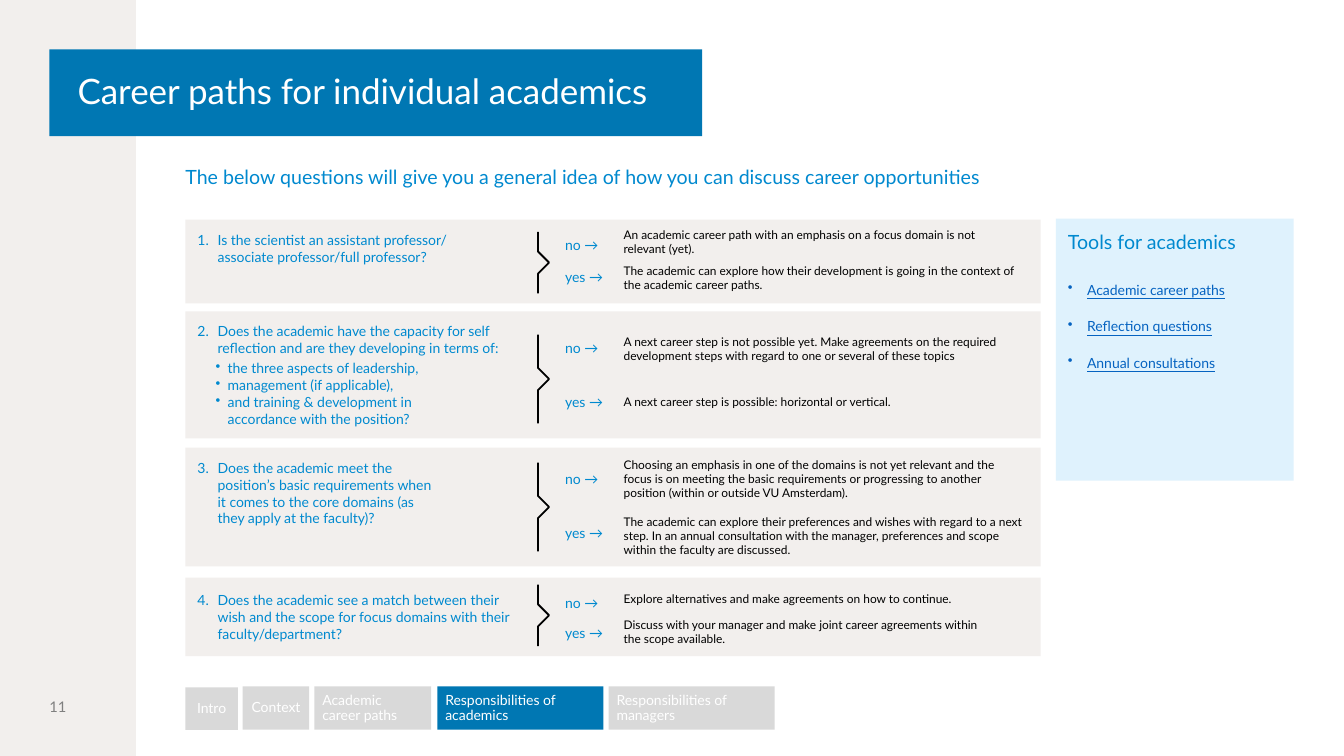
from collections import namedtuple

from lxml import etree
from pptx import Presentation
from pptx.dml.color import RGBColor
from pptx.enum.shapes import MSO_SHAPE
from pptx.enum.text import MSO_ANCHOR, MSO_AUTO_SIZE, PP_ALIGN
from pptx.oxml.ns import qn
from pptx.util import Inches, Pt

RECTANGLE = MSO_SHAPE.RECTANGLE
TOP, MIDDLE = MSO_ANCHOR.TOP, MSO_ANCHOR.MIDDLE
LEFT, CENTER = PP_ALIGN.LEFT, PP_ALIGN.CENTER
NO_AUTOFIT = MSO_AUTO_SIZE.NONE

FONT = "Lato"
SAND, PALE_BLUE, GREY = "F2EFED", "DFF2FD", "D9D9D9"
DEEP_BLUE, BLUE, LINK_BLUE = "0077B3", "0089CF", "0563C1"
WHITE, BLACK, MID_GREY = "FFFFFF", "000000", "7F7F7F"

PANEL_LEFT, PANEL_WIDTH = 1.84, 8.49
BRACKET_LEFT, BRACKET_DEPTH = 5.34, 0.11
LABEL_LEFT, ANSWER_LEFT = 5.61, 6.19
PADDING = (0.12, 0.12, 0.12, 0.12)

# Vertical pairs are (top, height); each answer is (label, label top, text top, width, text).
Question = namedtuple("Question", "panel bracket text_box text answers")
QUESTIONS = [
    Question((2.18, 0.83), (2.3, 0.61), (2.18, 3.02, 0.61),
             "Is the scientist an assistant professor/\nassociate professor/full professor?",
             [("no →", 2.28, 2.26, 3.83,
               "An academic career path with an emphasis on a focus domain is not relevant (yet)."),
              ("yes →", 2.6, 2.62, 3.93,
               "The academic can explore how their development is going in the context of "
               "the academic career paths.")]),
    Question((3.09, 1.26), (3.32, 0.88), (3.08, 3.35, 0.52),
             "Does the academic have the capacity for self reflection and are they "
             "developing in terms of:",
             [("no →", 3.3, 3.32, 4.06,
               "A next career step is not possible yet. Make agreements on the required "
               "development steps with regard to one or several of these topics"),
              ("yes →", 3.84, 3.92, 4.24,
               "A next career step is possible: horizontal or vertical.")]),
    Question((4.44, 1.18), (4.59, 0.88), (4.44, 2.61, 0.66),
             "Does the academic meet the\nposition’s basic requirements when it comes to "
             "the core domains (as they apply at the faculty)?",
             [("no →", 4.6, 4.54, 3.88,
               "Choosing an emphasis in one of the domains is not yet relevant and the focus "
               "is on meeting the basic requirements or progressing to another position "
               "(within or outside VU Amsterdam)."),
              ("yes →", 5.14, 5.11, 4.06,
               "The academic can explore their preferences and wishes with regard to a next "
               "step. In an annual consultation with the manager, preferences and scope "
               "within the faculty are discussed.")]),
    Question((5.73, 0.78), (5.8, 0.61), (5.75, 3.54, 0.71),
             "Does the academic see a match between their wish and the scope for focus "
             "domains with their faculty/department?",
             [("no →", 5.83, 5.87, 3.6,
               "Explore alternatives and make agreements on how to continue."),
              ("yes →", 6.13, 6.13, 3.6,
               "Discuss with your manager and make joint career agreements within the "
               "scope available.")]),
]
TOPICS = ["the three aspects of leadership,", "management (if applicable),",
          "and training & development in accordance with the position?"]
TOOLS = ["Academic career paths", "Reflection questions", "Annual consultations"]
TABS = [  # left, top, width, height, label, alignment, fill
    (1.84, 6.82, 0.52, 0.42, "Intro", CENTER, GREY),
    (2.41, 6.81, 0.66, 0.43, "Context", CENTER, GREY),
    (3.12, 6.81, 1.16, 0.43, "Academic career paths", LEFT, GREY),
    (4.34, 6.81, 1.65, 0.43, "Responsibilities of academics", LEFT, DEEP_BLUE),
    (6.04, 6.81, 1.65, 0.43, "Responsibilities of managers", LEFT, GREY),
]


def color(code):
    return RGBColor.from_string(code)


def place(shape, left, top, width, height):
    shape.left, shape.top = Inches(left), Inches(top)
    shape.width, shape.height = Inches(width), Inches(height)


def fill_solid(shape, code):
    shape.fill.solid()
    shape.fill.fore_color.rgb = color(code)


def set_frame(shape, insets=(0, 0, 0, 0), anchor=TOP, wrap=True):
    """Set insets (left, top, right, bottom), anchor and wrapping; return the text frame."""
    frame = shape.text_frame
    frame.auto_size = NO_AUTOFIT
    frame.word_wrap = wrap
    frame.vertical_anchor = anchor
    (frame.margin_left, frame.margin_top,
     frame.margin_right, frame.margin_bottom) = map(Inches, insets)
    return frame


def write(para, text, size, code, spacing=None, align=LEFT, underline=None):
    para.alignment = align
    if spacing is not None:
        para.line_spacing = spacing
    for index, line in enumerate(text.split("\n")):
        if index:
            para.add_line_break()
        span = para.add_run()
        span.text = line
        span.font.name = FONT
        span.font.size = Pt(size)
        span.font.color.rgb = color(code)
        span.font.underline = underline


def hang(para, indent, tag, **attributes):
    """Give the paragraph a hanging indent and a bullet or number."""
    properties = para._p.get_or_add_pPr()
    properties.set("marL", str(Inches(indent)))
    properties.set("indent", str(-Inches(indent)))
    etree.SubElement(properties, qn(tag), attributes)


def add_block(page, left, top, width, height, code):
    block = page.shapes.add_shape(RECTANGLE, 0, 0, 0, 0)
    place(block, left, top, width, height)
    fill_solid(block, code)
    block.line.fill.background()
    block.shadow.inherit = False
    return block


def add_frame(page, left, top, width, height, insets=(0, 0, 0, 0), anchor=TOP):
    box = page.shapes.add_textbox(0, 0, 0, 0)
    place(box, left, top, width, height)
    return set_frame(box, insets, anchor)


def add_text(page, area, text, size, code, spacing=None, **frame_options):
    frame = add_frame(page, *area, **frame_options)
    write(frame.paragraphs[0], text, size, code, spacing)
    return frame.paragraphs[0]


def add_bracket(page, top, height):
    middle = top + height / 2
    tip = BRACKET_LEFT + BRACKET_DEPTH
    points = [(BRACKET_LEFT, middle - BRACKET_DEPTH), (tip, middle),
              (BRACKET_LEFT, middle + BRACKET_DEPTH), (BRACKET_LEFT, top + height)]
    builder = page.shapes.build_freeform(Inches(BRACKET_LEFT), Inches(top))
    builder.add_line_segments([(Inches(x), Inches(y)) for x, y in points], close=False)
    bracket = builder.convert_to_shape()
    bracket.fill.background()
    bracket.line.color.rgb = color(BLACK)
    bracket.line.width = Pt(1.3)
    bracket.shadow.inherit = False


def add_question(page, number, question):
    panel_top, panel_height = question.panel
    add_block(page, PANEL_LEFT, panel_top, PANEL_WIDTH, panel_height, SAND)
    para = add_text(page, (PANEL_LEFT, *question.text_box), question.text, 10, BLUE,
                    Pt(12), insets=PADDING)
    hang(para, 0.2, "a:buAutoNum", type="arabicPeriod", startAt=str(number))
    add_bracket(page, *question.bracket)
    for label, label_top, text_top, width, text in question.answers:
        add_text(page, (LABEL_LEFT, label_top, 0.6, 0.3), label, 10, BLUE,
                 insets=(0, 0.05, 0, 0.05), anchor=MIDDLE)
        add_text(page, (ANSWER_LEFT, text_top, width, 0.37), text, 8.5, BLACK, Pt(10))


def add_topics(page):
    frame = add_frame(page, 2.02, 3.57, 2.84, 0.75, insets=(0.12, 0, 0.12, 0))
    for index, topic in enumerate(TOPICS):
        para = frame.add_paragraph() if index else frame.paragraphs[0]
        write(para, topic, 10, BLUE, Pt(12))
        hang(para, 0.12, "a:buChar", char="•")


def add_tools(page):
    panel = add_block(page, 10.48, 2.17, 2.36, 2.6, PALE_BLUE)
    frame = set_frame(panel, (0.12, 0.12, 0.04, 0.12))
    write(frame.paragraphs[0], "Tools for academics", 14, BLUE, Pt(16))
    for index, tool in enumerate(TOOLS):
        para = frame.add_paragraph()
        write(para, tool, 10, LINK_BLUE, Pt(13), underline=True)
        para.space_before = Pt(13 if index else 19)
        hang(para, 0.19, "a:buChar", char="•")


def add_tab(page, left, top, width, height, label, align, code):
    tab = add_block(page, left, top, width, height, code)
    frame = set_frame(tab, (0.08, 0.08, 0.08, 0.08), MIDDLE)
    write(frame.paragraphs[0], label, 10, WHITE, 0.9, align)


def add_title(page):
    """Lay the side band behind the title bar."""
    band = add_block(page, 0, 0, 1.35, 7.5, SAND)
    title = page.shapes.title
    band._element.addnext(title._element)
    place(title, 0.49, 0.49, 6.48, 0.86)
    fill_solid(title, DEEP_BLUE)
    frame = set_frame(title, (0.28, 0.24, 0.24, 0.24), MIDDLE, wrap=False)
    write(frame.paragraphs[0], "Career paths for individual academics", 25, WHITE, 0.9)


def main():
    deck = Presentation()
    deck.slide_width, deck.slide_height = Inches(13.34), Inches(7.5)
    page = deck.slides.add_slide(deck.slide_layouts[5])
    add_title(page)
    add_text(page, (0.49, 6.52, 0.86, 0.98), "11", 10.5, MID_GREY, anchor=MIDDLE)
    add_text(page, (1.84, 1.64, 11.01, 0.24),
             "The below questions will give you a general idea of how you can discuss "
             "career opportunities", 14, BLUE)
    for number, question in enumerate(QUESTIONS, start=1):
        add_question(page, number, question)
    add_topics(page)
    add_tools(page)
    for tab in TABS:
        add_tab(page, *tab)
    deck.save("out.pptx")


if __name__ == "__main__":
    main()
